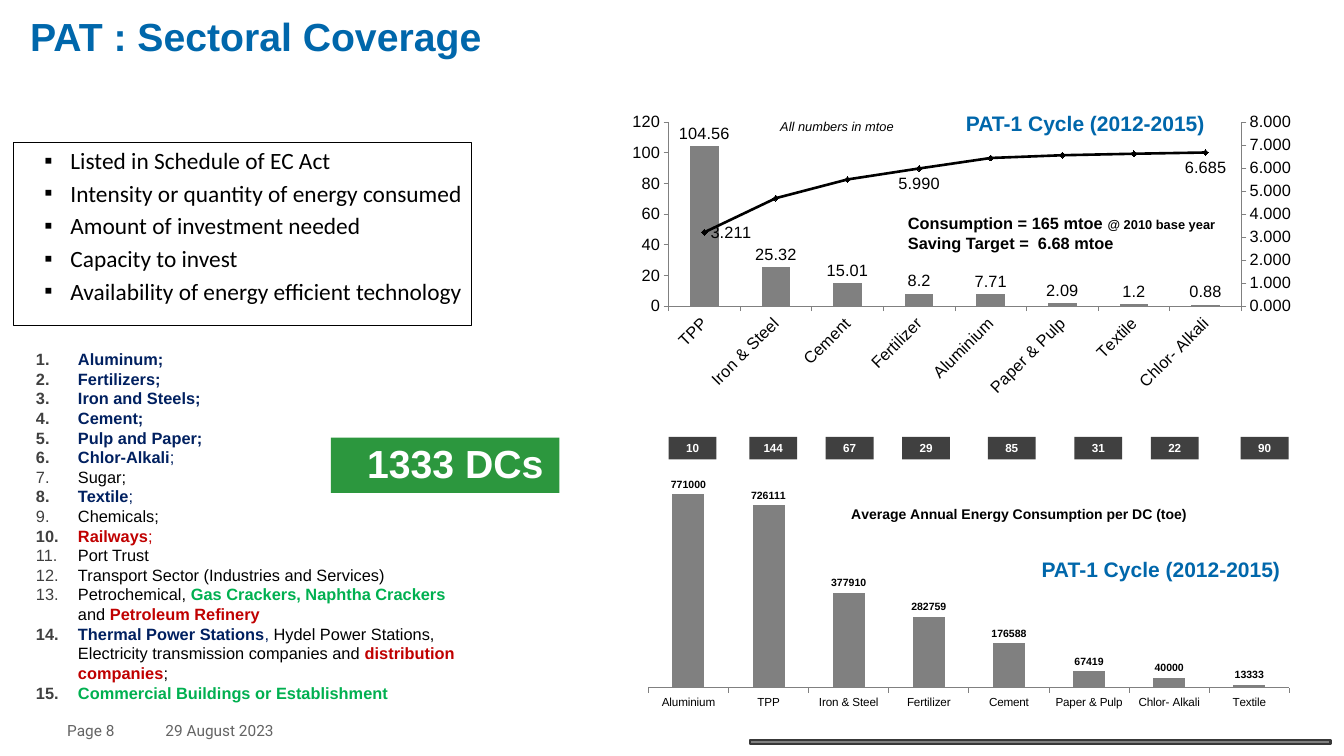
from pptx import Presentation
from pptx.chart.data import CategoryChartData
from pptx.dml.color import RGBColor
from pptx.enum.chart import (XL_CHART_TYPE, XL_LABEL_POSITION, XL_MARKER_STYLE,
                             XL_TICK_MARK)
from pptx.enum.shapes import MSO_SHAPE
from pptx.enum.text import MSO_ANCHOR, PP_ALIGN
from pptx.oxml import parse_xml
from pptx.oxml.ns import nsdecls, qn
from pptx.util import Inches, Pt

COLUMNS, ROWS = 16, 9
COLORS = {"blue": "0067AB", "navy": "002060", "red": "C00000", "lime": "00B050",
          "green": "2C973E", "black": "000000", "white": "FFFFFF", "bar": "808080",
          "dark": "404040", "edge": "383838", "footer": "646464"}
CLUSTERED = XL_CHART_TYPE.COLUMN_CLUSTERED
OUTSIDE_END, RIGHT, BELOW = (XL_LABEL_POSITION.OUTSIDE_END, XL_LABEL_POSITION.RIGHT,
                             XL_LABEL_POSITION.BELOW)
DIAMOND = XL_MARKER_STYLE.DIAMOND
TICK_OUT, TICK_NONE = XL_TICK_MARK.OUTSIDE, XL_TICK_MARK.NONE
RECTANGLE = MSO_SHAPE.RECTANGLE
TOP, MIDDLE = MSO_ANCHOR.TOP, MSO_ANCHOR.MIDDLE
LEFT, CENTER = PP_ALIGN.LEFT, PP_ALIGN.CENTER
HEADING_INSETS = (0.36, 0.06, 0.12, 0.06)
SQUARE = '<a:buFont {0} typeface="Arial"/>', '<a:buChar {0} char="▪"/>'
NUMBERS = ('<a:buClr {0}><a:srgbClr val="404040"/></a:buClr>',
           '<a:buFont {0} typeface="Arial"/>', '<a:buAutoNum {0} type="arabicPeriod"/>')


def color(name):
    return RGBColor.from_string(COLORS[name])


class Page:
    """One slide on a grid of 16 columns by 9 rows."""

    def __init__(self, deck):
        self.column = deck.slide_width / COLUMNS
        self.row = deck.slide_height / ROWS
        self.slide = deck.slides.add_slide(deck.slide_layouts[5])
        self.shapes = self.slide.shapes

    def place(self, left, top, width, height):
        return (int(left * self.column), int(top * self.row),
                int(width * self.column), int(height * self.row))

    def style(self, font, size=14, ink="black", bold=False, italic=False, face="Arial"):
        font.name, font.size, font.bold, font.italic = face, Pt(size), bold, italic
        font.color.rgb = color(ink)

    def set_paras(self, box, paras, insets=(0.1, 0.05, 0.1, 0.05), anchor=TOP, align=LEFT,
                  bullets=(), indent=(0, 0), gap=0, spacing=None, **base):
        """Each paragraph is a string or a list of (text, style changes)."""
        frame = box.text_frame
        frame.word_wrap, frame.vertical_anchor = True, anchor
        (frame.margin_left, frame.margin_top,
         frame.margin_right, frame.margin_bottom) = map(Inches, insets)
        for number, spans in enumerate(paras):
            para = frame.add_paragraph() if number else frame.paragraphs[0]
            para.alignment = align
            if bullets:
                properties = para._p.get_or_add_pPr()
                properties.set("marL", str(Inches(indent[0])))
                properties.set("indent", str(Inches(indent[1])))
                for bullet in bullets:
                    properties.append(parse_xml(bullet.format(nsdecls("a"))))
            para.space_before = Pt(gap if number else 0)
            if spacing:
                para.line_spacing = spacing
            for text, changes in [(spans, {})] if isinstance(spans, str) else spans:
                span = para.add_run()
                span.text = text
                self.style(span.font, **{**base, **changes})

    def title(self, place, text, **options):
        box = self.shapes.title
        box.left, box.top, box.width, box.height = self.place(*place)
        self.set_paras(box, [text], **options)

    def text(self, place, paras, **options):
        self.set_paras(self.shapes.add_textbox(*self.place(*place)), paras, **options)

    def block(self, place, paras=(), fill=None, edge=None, weight=0.75, **options):
        box = self.shapes.add_shape(RECTANGLE, *self.place(*place))
        box.shadow.inherit = False
        if fill:
            box.fill.solid()
            box.fill.fore_color.rgb = color(fill)
        else:
            box.fill.background()
        if edge:
            box.line.color.rgb, box.line.width = color(edge), Pt(weight)
        else:
            box.line.fill.background()
        self.set_paras(box, paras, **options)

    def layout(self, **shares):
        parts = "".join(f'<c:{key} val="{value}"/>' for key, value in shares.items())
        target = '<c:layoutTarget val="inner"/>' if "w" in shares else ""
        return parse_xml(f'<c:layout {nsdecls("c")}><c:manualLayout>{target}'
                         '<c:xMode val="edge"/><c:yMode val="edge"/>'
                         f'{parts}</c:manualLayout></c:layout>')

    def format_axis(self, axis, size):
        axis.has_major_gridlines = False
        axis.major_tick_mark, axis.minor_tick_mark = TICK_OUT, TICK_NONE
        axis.format.line.color.rgb = color("bar")
        self.style(axis.tick_labels.font, size)

    def columns(self, place, categories, series, plot_area, top, size, label_size,
                bold=False):
        data = CategoryChartData()
        data.categories = categories
        for name, values, number_format in series:
            data.add_series(name, values, number_format)
        chart = self.shapes.add_chart(CLUSTERED, *self.place(*place), data).chart
        self.style(chart.font, size)
        chart.has_legend = chart.has_title = False
        plot = chart.plots[0]
        plot.gap_width, plot.vary_by_categories = 150, False
        bars = plot.series[0]
        bars.format.fill.solid()
        bars.format.fill.fore_color.rgb = color("bar")
        labels = bars.data_labels
        labels.show_value, labels.position = True, OUTSIDE_END
        self.style(labels.font, label_size, bold=bold)
        for axis in (chart.category_axis, chart.value_axis):
            self.format_axis(axis, size)
        chart.value_axis.minimum_scale, chart.value_axis.maximum_scale = 0, top
        area = chart._chartSpace.chart.plotArea
        for old in area.findall(qn("c:layout")):
            area.remove(old)
        area.insert(0, self.layout(**plot_area))
        return chart

    def line_on_right_axis(self, chart, top, step, label_positions):
        """Turn the second series into a line on an axis at the right."""
        area = chart._chartSpace.chart.plotArea
        bar_plot = area.find(qn("c:barChart"))
        moved = bar_plot.findall(qn("c:ser"))[1]
        for unused in moved.findall(qn("c:invertIfNegative")):
            moved.remove(unused)
        line_plot = parse_xml(
            f'<c:lineChart {nsdecls("c")}><c:grouping val="standard"/>'
            '<c:varyColors val="0"/><c:marker val="1"/>'
            '<c:axId val="7001"/><c:axId val="7002"/></c:lineChart>')
        line_plot.insert(2, moved)
        bar_plot.addnext(line_plot)
        scale = f'<c:max val="{top}"/><c:min val="0"/>'
        for kind, own, other, limits, hidden, side, rest in (
                ("catAx", 7001, 7002, "", 1, "b", '<c:crosses val="autoZero"/>'),
                ("valAx", 7002, 7001, scale, 0, "r",
                 '<c:crosses val="max"/><c:crossBetween val="between"/>'
                 f'<c:majorUnit val="{step}"/>')):
            area.append(parse_xml(
                f'<c:{kind} {nsdecls("c")}><c:axId val="{own}"/><c:scaling>'
                f'<c:orientation val="minMax"/>{limits}</c:scaling>'
                f'<c:delete val="{hidden}"/><c:axPos val="{side}"/>'
                '<c:numFmt formatCode="0.000" sourceLinked="0"/>'
                '<c:majorTickMark val="out"/><c:minorTickMark val="none"/>'
                f'<c:tickLblPos val="nextTo"/><c:crossAx val="{other}"/>{rest}</c:{kind}>'))
        self.format_axis(type(chart.value_axis)(area.findall(qn("c:valAx"))[1]), 14)
        line = chart.plots[1].series[0]
        line.smooth = False
        line.format.line.color.rgb, line.format.line.width = color("black"), Pt(2.25)
        line.marker.style, line.marker.size = DIAMOND, 5
        line.marker.format.fill.solid()
        line.marker.format.fill.fore_color.rgb = color("black")
        line.data_labels.show_value = False
        for point, position in label_positions.items():
            label = line.points[point].data_label
            self.style(label.font, 14)
            label.position = position


def main():
    deck = Presentation()
    deck.slide_width, deck.slide_height = Inches(16), Inches(9)
    page = Page(deck)

    # Title, footer and bottom rule
    heading = dict(insets=HEADING_INSETS, anchor=MIDDLE, bold=True, spacing=0.95)
    page.title((0, 0.12, 12.64, 0.66), "PAT : Sectoral Coverage", size=33.6, ink="blue",
               **heading)
    for left, words in ((0.8, "Page 8"), (1.97, "29 August 2023")):
        page.text((left, 8.56, 1.9, 0.26), [words], insets=(0, 0, 0, 0), anchor=MIDDLE,
                  size=13.2, ink="footer", face="Roboto")
    page.block((8.93, 8.81, 6.91, 0.05), fill="bar", edge="edge", weight=2)

    # Criteria
    page.block((0.16, 1.69, 5.45, 2.18),
               ["Listed in Schedule of EC Act", "Intensity or quantity of energy consumed",
                "Amount of investment needed", "Capacity to invest",
                "Availability of energy efficient technology"],
               edge="black", insets=(0.1, 0.05, 0, 0.05), bullets=SQUARE,
               indent=(0.58, -0.31), gap=4, size=20, face="Calibri")

    # Sectors
    navy, red, lime = (dict(ink=ink, bold=True) for ink in ("navy", "red", "lime"))
    page.text((0.02, 4.11, 5.59, 4.37), [
        [("Aluminum;", navy)], [("Fertilizers;", navy)], [("Iron and Steels;", navy)],
        [("Cement;", navy)], [("Pulp and Paper;", navy)],
        [("Chlor-Alkali", navy), (";", {"ink": "navy"})], "Sugar;",
        [("Textile", navy), (";", {"ink": "navy"})], "Chemicals;",
        [("Railways", red), (";", {"ink": "red"})], "Port Trust",
        "Transport Sector (Industries and Services)",
        [("Petrochemical, ", {}), ("Gas Crackers, Naphtha Crackers", lime), (" and ", {}),
         ("Petroleum Refinery", red)],
        [("Thermal Power Stations", navy), (", ", {"ink": "navy"}),
         ("Hydel Power Stations, Electricity transmission companies and ", {}),
         ("distribution companies", red), (";", {})],
        [("Commercial Buildings or Establishment", lime)],
    ], bullets=NUMBERS, indent=(0.81, -0.5), spacing=Pt(16.8))

    # Consumption and cumulative saving
    chart = page.columns(
        (7.39, 1.28, 8.12, 3.53),
        ["TPP", "Iron & Steel", "Cement", "Fertilizer", "Aluminium", "Paper & Pulp",
         "Textile", "Chlor- Alkali"],
        [("Series 1", [104.56, 25.32, 15.01, 8.2, 7.71, 2.09, 1.2, 0.88], "General"),
         ("Series 2", [3.211, 4.697, 5.512, 5.99, 6.446, 6.565, 6.631, 6.685], "0.000")],
        dict(x=0.07, y=0.05, w=0.84, h=0.62), top=120, size=14, label_size=14)
    chart.value_axis.major_unit = 20
    chart.category_axis._element.find(qn("c:txPr")).bodyPr.set("rot", "-2700000")
    page.line_on_right_axis(chart, 8, 1, {0: RIGHT, 3: BELOW, 7: BELOW})
    page.text((10.71, 2.49, 4.44, 0.57),
              [[("Consumption = 165 mtoe ", {}), ("@ 2010 base year", {"size": 11})],
               "Saving Target =  6.68 mtoe"], bold=True)
    page.text((9.19, 1.36, 2.5, 0.29), ["All numbers in mtoe"], size=11, italic=True)

    # Average consumption per consumer
    chart = page.columns(
        (7.56, 5.04, 7.95, 3.5),
        ["Aluminium", "TPP", "Iron & Steel", "Fertilizer", "Cement", "Paper & Pulp",
         "Chlor- Alkali", "Textile"],
        [("Series 1", [771000, 726111, 377910, 282759, 176588, 67419, 40000, 13333], "0")],
        dict(x=0.02, y=0.13, w=0.96, h=0.77), top=900000, size=10, label_size=9, bold=True)
    chart.value_axis.visible = False
    caption = chart.chart_title
    caption.text_frame.text = "Average Annual Energy Consumption per DC (toe)"
    page.style(caption.text_frame.paragraphs[0].runs[0].font, 12, bold=True)
    for old in caption._element.findall(qn("c:layout")):
        caption._element.remove(old)
    caption._element.find(qn("c:tx")).addnext(page.layout(x=0.32, y=0.27))

    # Consumers per sector
    for left, count in zip((7.96, 8.92, 9.83, 10.74, 11.76, 12.79, 13.7, 14.77),
                           (10, 144, 67, 29, 85, 31, 22, 90)):
        page.block((left, 5.2, 0.57, 0.27), [str(count)], fill="dark", anchor=MIDDLE,
                   align=CENTER, size=10, ink="white", bold=True)

    # Cycle headings and total
    for left, top in ((11.14, 1.27), (12.04, 6.58)):
        page.text((left, top, 3.6, 0.41), ["PAT-1 Cycle (2012-2015)"], size=18, ink="blue",
                  **heading)
    page.block((3.94, 5.21, 2.72, 0.66), ["1333 DCs"], fill="green", align=CENTER,
               size=33.6, ink="white", **heading)
    deck.save("out.pptx")


if __name__ == "__main__":
    main()
